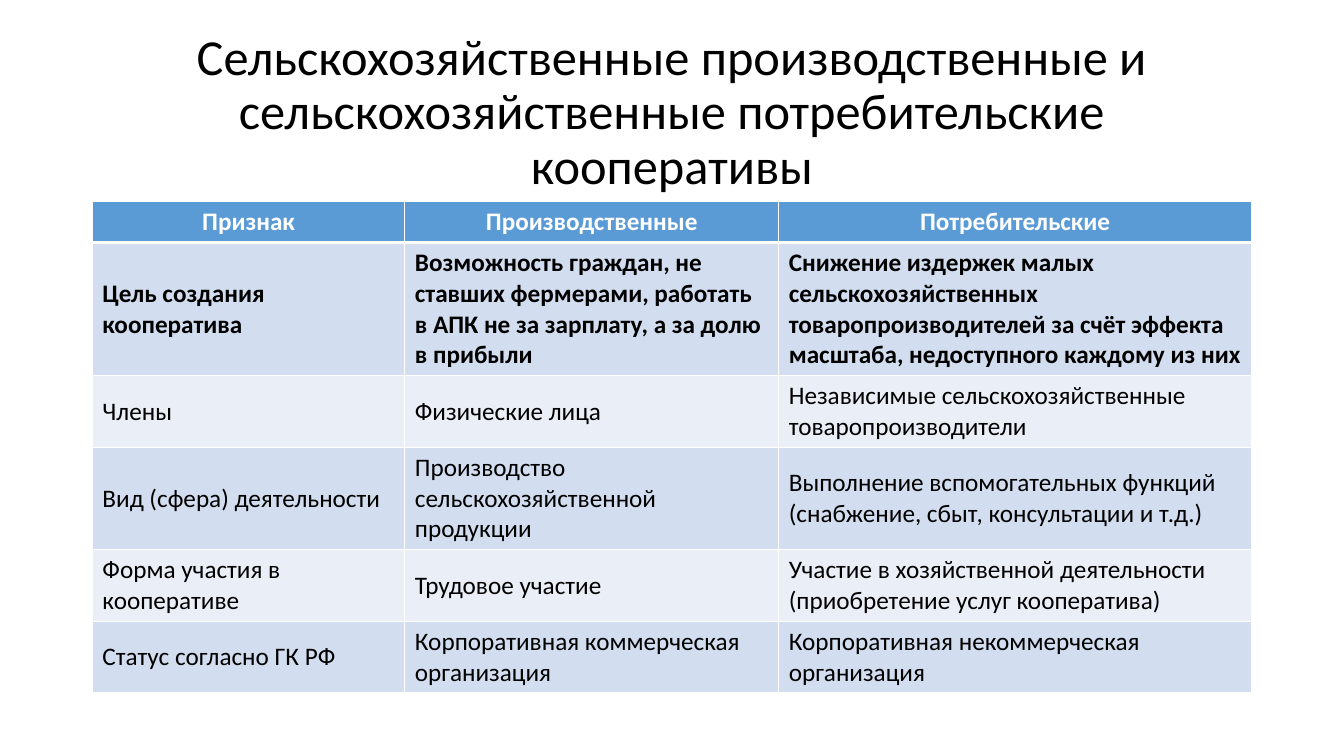
from dataclasses import dataclass

from lxml.etree import SubElement
from pptx import Presentation
from pptx.dml.color import RGBColor
from pptx.enum.text import MSO_ANCHOR as Anchor, MSO_AUTO_SIZE as AutoSize, PP_ALIGN as Align
from pptx.oxml.ns import qn
from pptx.slide import Slide
from pptx.table import _Cell as Cell
from pptx.text.text import TextFrame
from pptx.util import Pt

COLORS = {
    "text": "000000",
    "white": "FFFFFF",
    "header": "5B9BD5",
    "odd_row": "D2DEEF",
    "even_row": "EAEFF7",
}
FONT = "Calibri"
LEFT, WIDTH = 66, 828
TABLE_TOP, TABLE_HEIGHT = 144, 346.3
COLUMN_WIDTHS = (223.2, 267.1, 337.7)
ROW_HEIGHT = 29.2  # rows grow to fit their text

TITLE = "Сельскохозяйственные производственные и сельскохозяйственные потребительские кооперативы"


@dataclass(frozen=True)
class FeatureRow:
    feature: str
    production: str
    consumer: str
    bold: bool = False

    def texts(self) -> tuple[str, str, str]:
        return self.feature, self.production, self.consumer


ROWS = (
    FeatureRow("Признак", "Производственные", "Потребительские", bold=True),
    FeatureRow(
        "Цель создания кооператива",
        "Возможность граждан, не ставших фермерами, работать в АПК не за зарплату, а за долю в прибыли",
        "Снижение издержек малых сельскохозяйственных товаропроизводителей за счёт эффекта масштаба, "
        "недоступного каждому из них",
        bold=True,
    ),
    FeatureRow(
        "Члены",
        "Физические лица",
        "Независимые сельскохозяйственные товаропроизводители",
    ),
    FeatureRow(
        "Вид (сфера) деятельности",
        "Производство сельскохозяйственной продукции",
        "Выполнение вспомогательных функций (снабжение, сбыт, консультации и т.д.)",
    ),
    FeatureRow(
        "Форма участия в кооперативе",
        "Трудовое участие",
        "Участие в хозяйственной деятельности (приобретение услуг кооператива)",
    ),
    FeatureRow(
        "Статус согласно ГК РФ",
        "Корпоративная коммерческая организация",
        "Корпоративная некоммерческая организация",
    ),
)


def write_text(
    frame: TextFrame,
    text: str,
    *,
    size: float,
    color: str = "text",
    bold: bool = False,
    align: Align = Align.LEFT,
    line_spacing: float = 1.0,
) -> None:
    paragraph = frame.paragraphs[0]
    paragraph.alignment = align
    paragraph.line_spacing = line_spacing
    run = paragraph.add_run()
    run.text = text
    run.font.name = FONT
    run.font.size = Pt(size)
    run.font.bold = bold
    run.font.color.rgb = RGBColor.from_string(COLORS[color])


def add_borders(cell: Cell, bottom: float, top: float) -> None:
    properties = cell._tc.get_or_add_tcPr()
    for side, width in (("L", 1), ("R", 1), ("T", top), ("B", bottom)):
        line = SubElement(properties, qn(f"a:ln{side}"), w=str(Pt(width)))
        fill = SubElement(line, qn("a:solidFill"))
        SubElement(fill, qn("a:srgbClr"), val=COLORS["white"])


def add_title(slide: Slide) -> None:
    title = slide.shapes.title
    title.left, title.top = Pt(LEFT), Pt(28.8)
    title.width, title.height = Pt(WIDTH), Pt(104.4)
    frame = title.text_frame
    frame.word_wrap = True
    frame.auto_size = AutoSize.NONE
    frame.vertical_anchor = Anchor.MIDDLE
    write_text(frame, TITLE, size=36, align=Align.CENTER, line_spacing=0.9)


def add_comparison_table(slide: Slide) -> None:
    shape = slide.shapes.add_table(
        len(ROWS), len(COLUMN_WIDTHS), Pt(LEFT), Pt(TABLE_TOP), Pt(WIDTH), Pt(TABLE_HEIGHT)
    )
    table = shape.table
    for column, width in zip(table.columns, COLUMN_WIDTHS):
        column.width = Pt(width)
    for row_index, row in enumerate(ROWS):
        table.rows[row_index].height = Pt(ROW_HEIGHT)
        is_header = row_index == 0
        fill = "header" if is_header else "odd_row" if row_index % 2 else "even_row"
        for column_index, text in enumerate(row.texts()):
            cell = table.cell(row_index, column_index)
            cell.vertical_anchor = Anchor.MIDDLE
            add_borders(cell, bottom=3 if is_header else 1, top=3 if row_index == 1 else 1)
            cell.fill.solid()
            cell.fill.fore_color.rgb = RGBColor.from_string(COLORS[fill])
            write_text(
                cell.text_frame,
                text,
                size=18,
                color="white" if is_header else "text",
                bold=row.bold,
                align=Align.CENTER if is_header else Align.LEFT,
            )
    shape.height = Pt(TABLE_HEIGHT)


def main() -> None:
    presentation = Presentation()
    presentation.slide_width, presentation.slide_height = Pt(960), Pt(540)
    title_only = presentation.slide_layouts.get_by_name("Title Only")
    slide = presentation.slides.add_slide(title_only)
    add_title(slide)
    add_comparison_table(slide)
    presentation.save("out.pptx")


if __name__ == "__main__":
    main()
